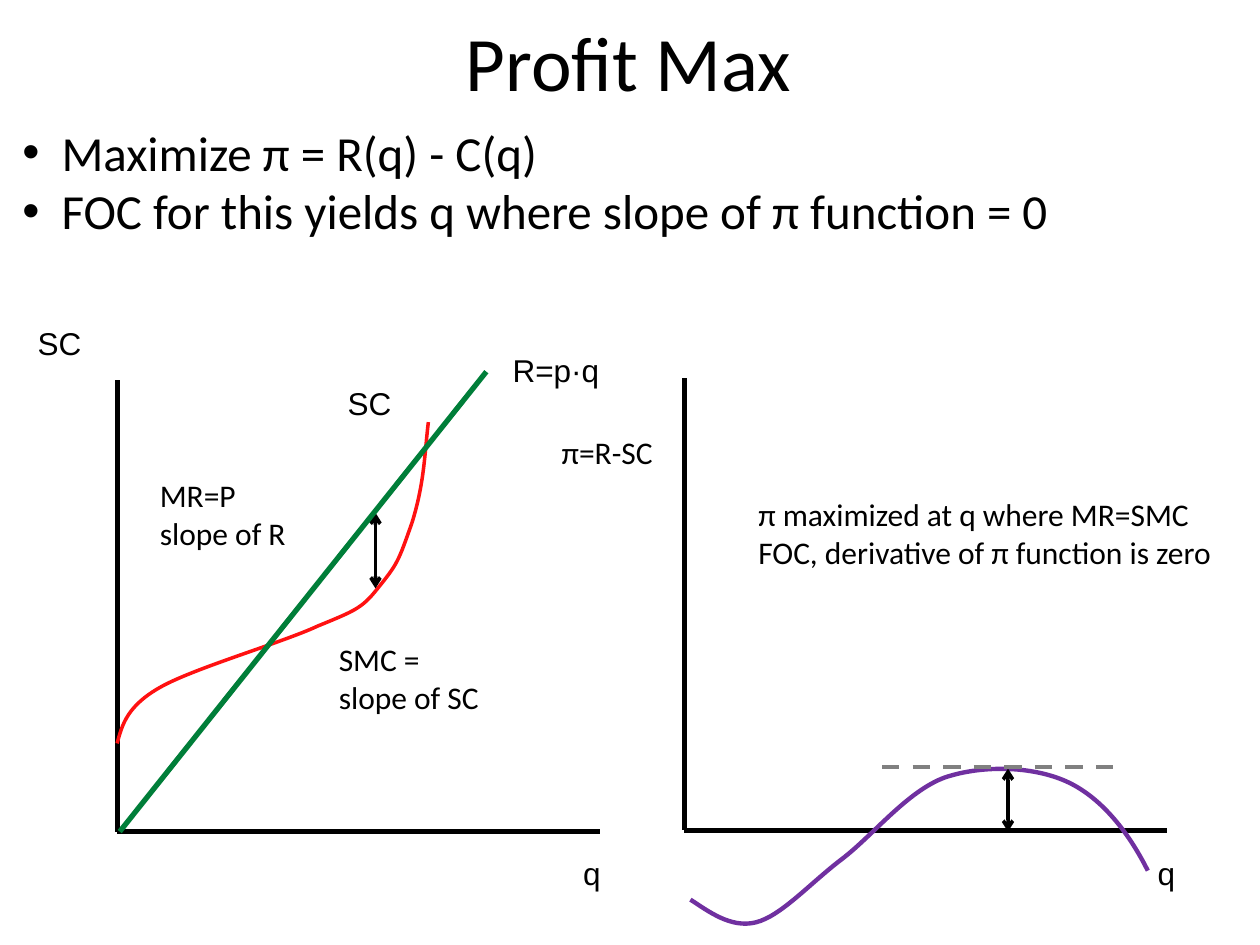
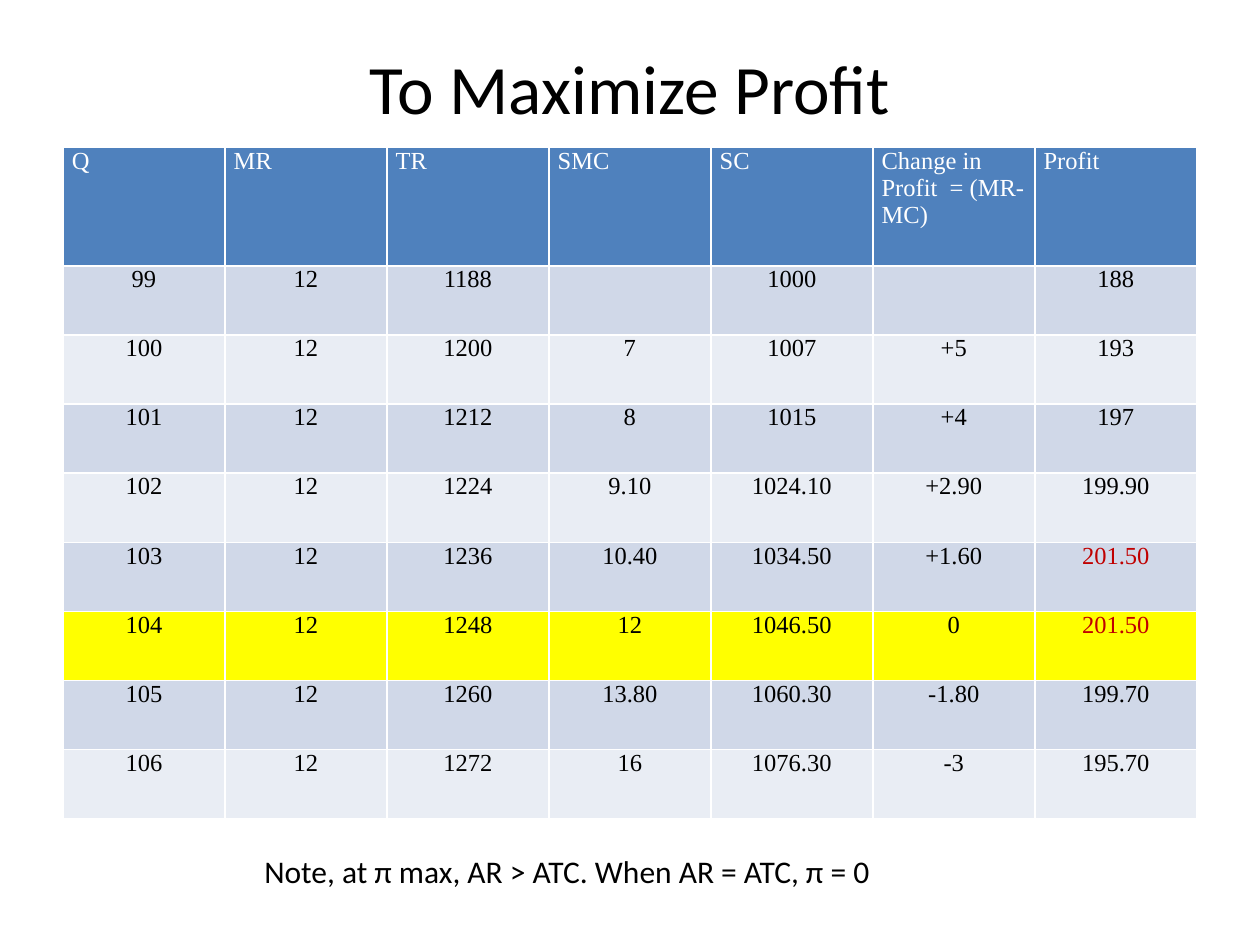
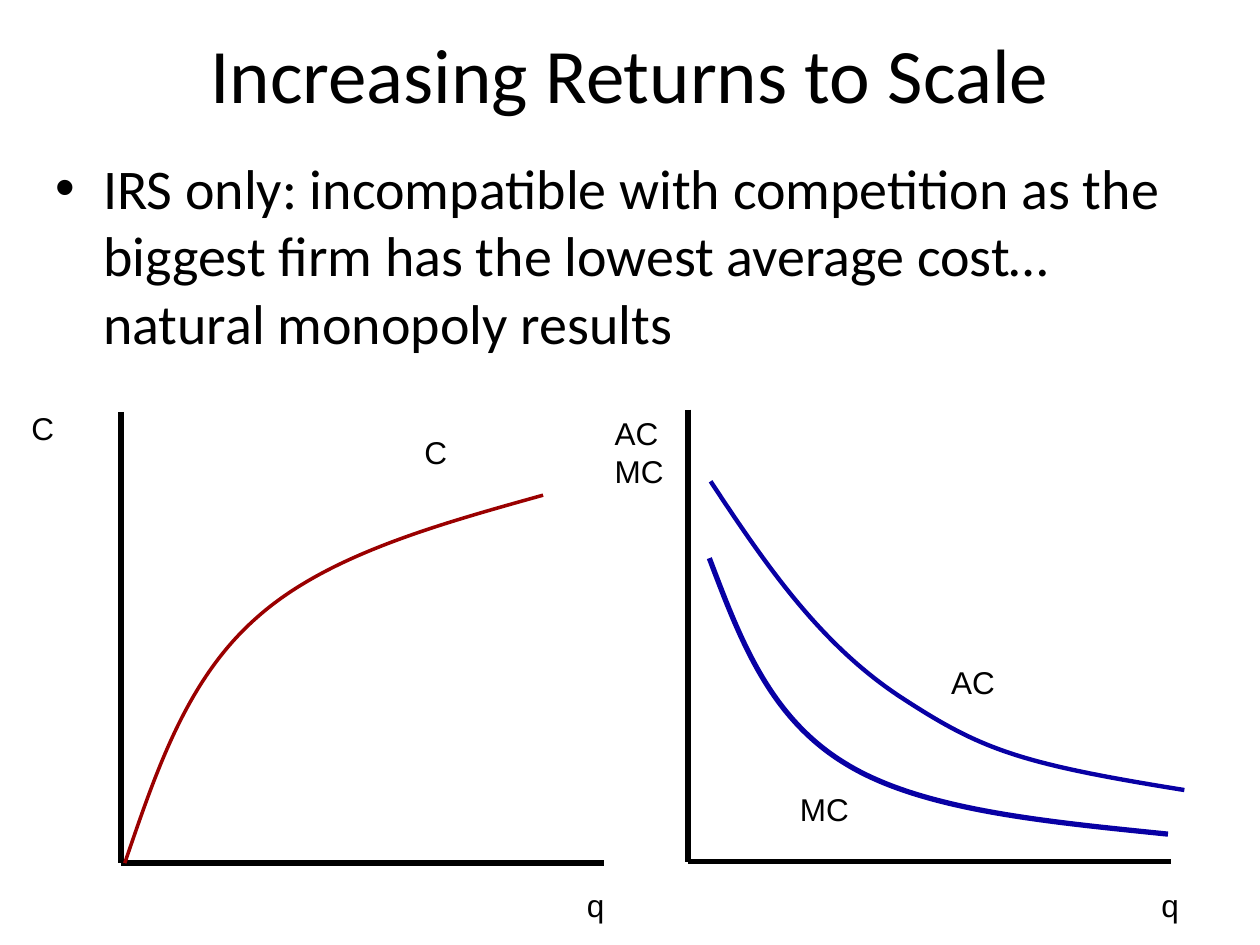
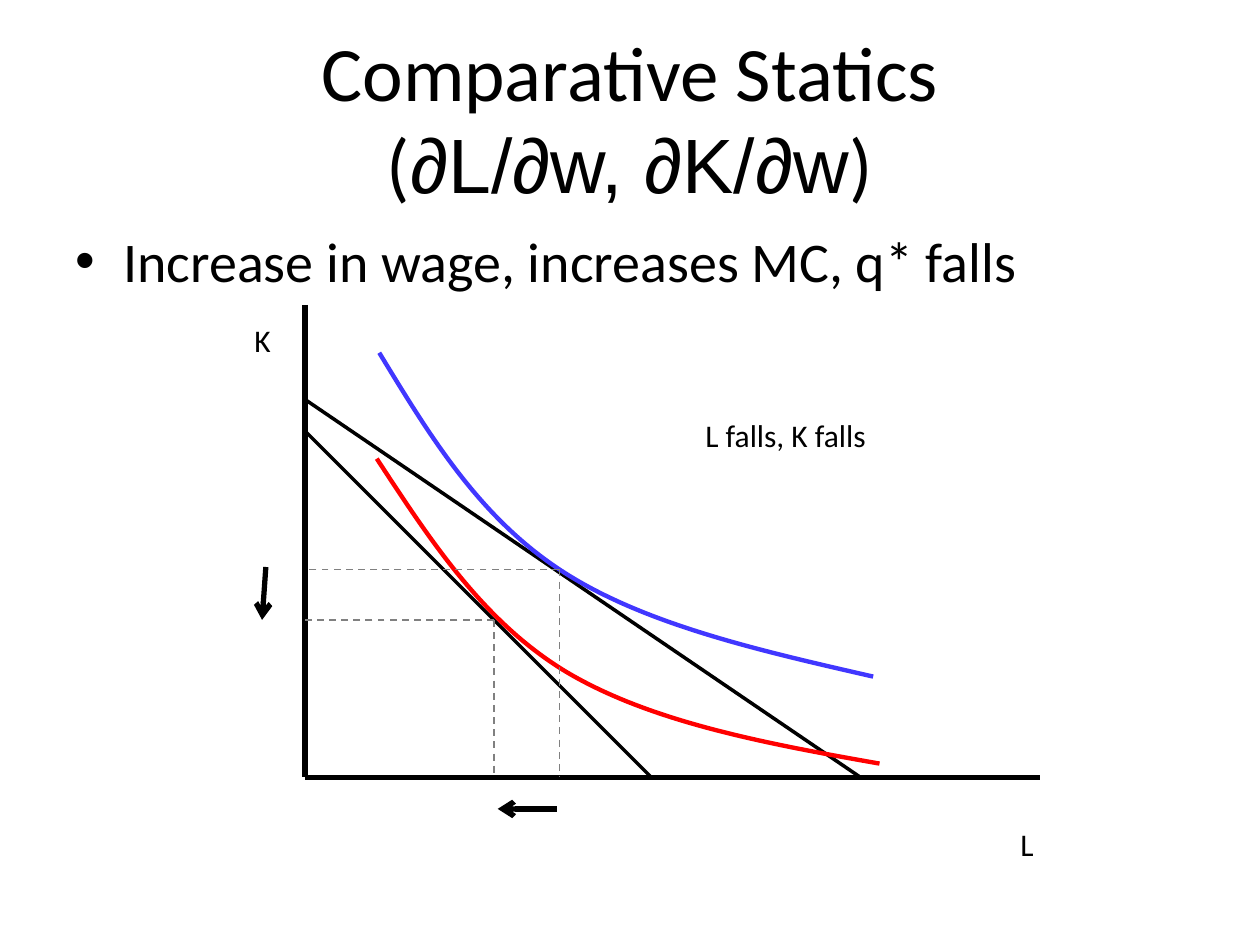
import dataclasses

import pptx
import pptx.dml.color
import pptx.enum.dml
import pptx.enum.shapes
import pptx.enum.text
import pptx.oxml
import pptx.oxml.ns
import pptx.oxml.xmlchemy
import pptx.util

Inches = pptx.util.Inches
Pt = pptx.util.Pt


@dataclasses.dataclass(frozen=True)
class Theme:
    # Colours
    ink: str = "000000"
    white: str = "FFFFFF"
    guide: str = "808080"
    cost: str = "FF1111"
    revenue: str = "007E39"
    profit: str = "7030A0"
    total_cost: str = "9A0000"
    unit_cost: str = "0800A4"
    isoquant_before: str = "4137FF"
    isoquant_after: str = "FF0000"
    header: str = "4F81BD"
    bands: tuple = ("D0D8E8", "E9EDF4")
    highlight: str = "FFFF00"
    best_profit: str = "C00000"
    # Fonts and type sizes
    sans: str = "Calibri"
    plain: str = "Arial"
    serif: str = "Times New Roman"
    title: float = 44
    small_title: float = 39.6
    body: float = 32
    small_body: float = 28
    label: float = 18
    cell: float = 14
    # Line widths
    axis: float = 3
    thick: float = 2.5
    thin: float = 2
    hair: float = 1


THEME = Theme()


def rgb(value):
    return pptx.dml.color.RGBColor.from_string(value)


def apply(target, formats):
    for name, value in formats.items():
        setattr(target, name, value)


def add_xml(parent, tag, **attributes):
    child = pptx.oxml.xmlchemy.OxmlElement(tag)
    for name, value in attributes.items():
        child.set(name, str(value))
    parent.append(child)
    return child


class Deck:
    def __init__(self, theme):
        self.theme = theme
        self.file = pptx.Presentation()
        apply(self.file, {"slide_width": Inches(10), "slide_height": Inches(7.5)})
        self.slide = None

    def new_slide(self):
        self.slide = self.file.slides.add_slide(self.file.slide_layouts[6])

    # Text
    def style_font(self, font, size, family, color):
        apply(font, {"size": Pt(size), "name": family, "bold": False})
        font.color.rgb = rgb(color)

    def text(self, box, paragraphs, size, family, frame_format, align=None):
        """Each paragraph is a string or a list of (text, font) pieces."""
        frame = self.slide.shapes.add_textbox(*map(Inches, box)).text_frame
        apply(frame, frame_format)
        for index, pieces in enumerate(paragraphs):
            paragraph = frame.add_paragraph() if index else frame.paragraphs[0]
            paragraph.alignment = align
            if isinstance(pieces, str):
                pieces = [(pieces, family)]
            for words, piece_family in pieces:
                if words == "\n":
                    paragraph.add_line_break()
                    continue
                run = paragraph.add_run()
                run.text = words
                self.style_font(run.font, size, piece_family, self.theme.ink)
        return frame

    def title(self, box, pieces, size=THEME.title):
        self.text(box, [pieces], size, self.theme.sans,
                  {"word_wrap": True,
                   "vertical_anchor": pptx.enum.text.MSO_ANCHOR.MIDDLE},
                  pptx.enum.text.PP_ALIGN.CENTER)

    def bullets(self, box, items, size=THEME.body, indent=0.38):
        frame = self.text(box, items, size, self.theme.sans, {"word_wrap": True})
        for paragraph in frame.paragraphs:
            properties = paragraph._p.get_or_add_pPr()
            properties.set("marL", str(Inches(indent)))
            properties.set("indent", str(-Inches(indent)))
            add_xml(properties, "a:buFont", typeface=self.theme.plain)
            add_xml(properties, "a:buChar", char="•")

    def label(self, box, *lines, family=THEME.plain):
        self.text(box, lines, self.theme.label, family,
                  {"word_wrap": False,
                   "auto_size": pptx.enum.text.MSO_AUTO_SIZE.SHAPE_TO_FIT_TEXT})

    def note(self, box, *lines):
        self.label(box, *lines, family=self.theme.sans)

    # Lines and curves
    def line(self, start, end, color=THEME.ink, width=THEME.axis,
             dashed=False, arrows=()):
        connector = self.slide.shapes.add_connector(
            pptx.enum.shapes.MSO_CONNECTOR.STRAIGHT, *map(Inches, start + end))
        connector.line.color.rgb = rgb(color)
        connector.line.width = Pt(width)
        if dashed:
            connector.line.dash_style = pptx.enum.dml.MSO_LINE.DASH
        for end_name in arrows:
            add_xml(connector.get_or_add_ln(), f"a:{end_name}End", type="arrow")
        add_xml(connector._element.spPr, "a:effectLst")

    def guide(self, start, end):
        self.line(start, end, self.theme.guide, self.theme.hair, dashed=True)

    def axes(self, left, top, right, base):
        self.line((left, top), (left, base))
        self.line((left, base), (right, base))

    def axis_pair(self, dx=0, dy=0):
        """Two graphs side by side, with q on each horizontal axis."""
        for left, top, base, q_left in ((0.93, 3.02, 6.6, 4.53),
                                        (5.43, 3, 6.59, 9.09)):
            self.axes(left + dx, top + dy, left + 3.83 + dx, base + dy)
            self.label((q_left + dx, 6.73 + dy, 0.34, 0.4), "q")

    def curve(self, start, segments, color, width):
        """Each segment is (control, control, end point)."""
        builder = self.slide.shapes.build_freeform(*map(Inches, start))
        ends = [tuple(map(Inches, segment[-1])) for segment in segments]
        builder.add_line_segments(ends, close=False)
        shape = builder.convert_to_shape()
        # Bend each straight step into a cubic one
        qn = pptx.oxml.ns.qn
        steps = list(shape._element.iter(qn("a:lnTo")))
        for step, segment in zip(steps, segments):
            step.tag = qn("a:cubicBezTo")
            end_point = step[0]
            for x, y in segment[:2]:
                add_xml(step, "a:pt", x=Inches(x) - shape.left,
                        y=Inches(y) - shape.top)
            step.append(end_point)
        shape.fill.background()
        shape.shadow.inherit = False
        shape.line.color.rgb = rgb(color)
        shape.line.width = Pt(width)

    # Table
    def table(self, box, rows, header_height, highlight_row, best_profit):
        theme = self.theme
        table = self.slide.shapes.add_table(
            len(rows), len(rows[0]), *map(Inches, box)).table
        table.horz_banding = False
        row_height = (box[3] - header_height) / (len(rows) - 1)
        margins = {"margin_left": Inches(0.07), "margin_right": Inches(0.07),
                   "margin_top": 0, "margin_bottom": 0}
        for r, values in enumerate(rows):
            table.rows[r].height = Inches(row_height if r else header_height)
            if r == 0:
                fill = theme.header
            elif r == highlight_row:
                fill = theme.highlight
            else:
                fill = theme.bands[(r - 1) % 2]
            for c, value in enumerate(values):
                cell = table.cell(r, c)
                apply(cell, margins)
                cell.fill.solid()
                cell.fill.fore_color.rgb = rgb(fill)
                paragraph = cell.text_frame.paragraphs[0]
                if r:
                    paragraph.alignment = pptx.enum.text.PP_ALIGN.CENTER
                if not value:
                    continue
                run = paragraph.add_run()
                run.text = value
                color = theme.ink if r else theme.white
                if value == best_profit:
                    color = theme.best_profit
                self.style_font(run.font, theme.cell, theme.serif, color)


def profit_max(deck):
    theme = deck.theme
    deck.new_slide()
    deck.title((0.49, 0.05, 9, 0.87), "Profit Max")
    deck.bullets((0.08, 0.92, 9.81, 1.04),
                 ["Maximize π = R(q) - C(q)",
                  "FOC for this yields q where slope of π function = 0"],
                 theme.small_body, 0.31)
    deck.axis_pair()

    # Revenue and cost
    deck.curve((0.93, 5.9),
               [((0.97, 5.75), (1.01, 5.6), (1.28, 5.45)),
                ((1.55, 5.3), (2.24, 5.1), (2.52, 4.97)),
                ((2.81, 4.85), (2.87, 4.83), (2.99, 4.68)),
                ((3.16, 4.47), (3.16, 4.46), (3.27, 4.15)),
                ((3.37, 3.83), (3.37, 3.6), (3.4, 3.35))],
               theme.cost, theme.thin)
    deck.label((0.2, 2.52, 0.55, 0.4), "SC")
    deck.label((3.97, 2.74, 0.9, 0.4), "R=p·q")
    deck.label((2.66, 3, 0.55, 0.4), "SC")
    deck.note((1.17, 3.73, 1.24, 0.71), "MR=P", "slope of R")
    deck.note((2.59, 5.03, 1.38, 0.71), "SMC =", "slope of SC")

    # Profit
    deck.note((4.36, 3.39, 1.03, 0.4), "π=R-SC")
    deck.curve((5.48, 7.14),
               [((5.62, 7.23), (5.8, 7.37), (6, 7.32)),
                ((6.2, 7.27), (6.43, 7.01), (6.68, 6.82)),
                ((6.93, 6.63), (7.2, 6.28), (7.5, 6.17)),
                ((7.8, 6.07), (8.19, 6.08), (8.46, 6.2)),
                ((8.73, 6.32), (8.95, 6.59), (9.11, 6.91))],
               theme.profit, theme.thick)
    for x, top, bottom in ((2.98, 4.07, 4.67), (8, 6.1, 6.6)):
        deck.line((x, top), (x, bottom), width=theme.thin, arrows=("head", "tail"))
    deck.note((5.92, 3.88, 3.93, 0.71), "π maximized at q where MR=SMC",
              "FOC, derivative of π function is zero")
    deck.line((0.95, 6.6), (3.86, 2.95), theme.revenue)
    deck.line((7, 6.09), (8.92, 6.09), theme.guide, theme.thick, dashed=True)


def to_maximize_profit(deck):
    deck.new_slide()
    deck.title((0.5, 0.3, 9, 0.78), "To Maximize Profit", deck.theme.small_title)
    rows = [
        ("Q", "MR", "TR", "SMC", "SC", "Change in Profit  = (MR-MC)", "Profit"),
        ("99", "12", "1188", "", "1000", "", "188"),
        ("100", "12", "1200", "7", "1007", "+5", "193"),
        ("101", "12", "1212", "8", "1015", "+4", "197"),
        ("102", "12", "1224", "9.10", "1024.10", "+2.90", "199.90"),
        ("103", "12", "1236", "10.40", "1034.50", "+1.60", "201.50"),
        ("104", "12", "1248", "12", "1046.50", "0", "201.50"),
        ("105", "12", "1260", "13.80", "1060.30", "-1.80", "199.70"),
        ("106", "12", "1272", "16", "1076.30", "-3", "195.70"),
    ]
    deck.table((0.5, 1.17, 9, 5.33), rows, header_height=0.94,
               highlight_row=6, best_profit="201.50")
    deck.note((2, 6.71, 5.07, 0.4),
              "Note, at π max, AR > ATC. When AR = ATC, π = 0")


def increasing_returns(deck):
    theme = deck.theme
    deck.new_slide()
    deck.title((0.5, 0.08, 9, 1), "Increasing Returns to Scale")
    deck.bullets((0.34, 1.17, 9.36, 6.22),
                 ["IRS only: incompatible with competition as the biggest firm "
                  "has the lowest average cost… natural monopoly results"])
    deck.axis_pair(0.03, 0.25)

    # Average and marginal cost
    deck.curve((5.64, 3.82),
               [((6.1, 4.52), (6.53, 5.13), (7.16, 5.54)),
                ((7.79, 5.95), (8.09, 6.06), (9.4, 6.27))],
               theme.unit_cost, theme.thick)
    deck.curve((5.63, 4.43),
               [((5.87, 5.06), (6.1, 5.69), (6.71, 6.06)),
                ((7.31, 6.43), (8.29, 6.52), (9.27, 6.62))],
               theme.unit_cost, theme.axis)
    deck.label((4.78, 3.24, 0.59, 0.71), "AC", "MC")
    deck.label((7.45, 5.21, 0.55, 0.4), "AC")
    deck.label((6.25, 6.22, 0.59, 0.4), "MC")

    # Total cost
    deck.curve((0.99, 6.85),
               [((1.24, 6.12), (1.48, 5.39), (2.04, 4.9)),
                ((2.59, 4.41), (3.45, 4.17), (4.31, 3.93))],
               theme.total_cost, theme.thin)
    for left, top in ((0.15, 3.2), (3.27, 3.39)):
        deck.label((left, top, 0.38, 0.4), "C")


def comparative_statics(deck):
    theme = deck.theme
    deck.new_slide()
    deck.title((0.5, 0.3, 9, 1.25),
               [("Comparative Statics", theme.sans), ("\n", theme.sans),
                ("(", theme.sans), ("∂L/∂w, ∂K/∂w", theme.plain),
                (")", theme.sans)])
    deck.bullets((0.5, 1.75, 8.92, 0.58),
                 ["Increase in wage, increases MC, q* falls"])

    # Axes, isocosts and isoquants
    left, base = 2.42, 6.17
    deck.axes(left, 2.42, 8.25, base)
    for top, right in ((3.17, 6.83), (3.42, 5.17)):
        deck.line((left, top), (right, base), width=theme.thin)
    deck.curve((3.01, 2.8),
               [((3.4, 3.44), (3.79, 4.09), (4.44, 4.52)),
                ((5.09, 4.95), (6.01, 5.16), (6.93, 5.37))],
               theme.isoquant_before, theme.thick)
    deck.curve((2.99, 3.64),
               [((3.41, 4.28), (3.83, 4.93), (4.49, 5.33)),
                ((5.16, 5.73), (6.07, 5.9), (6.98, 6.06))],
               theme.isoquant_after, theme.thick)

    # Input choices before and after the wage increase
    for choice in ((4.44, 4.52), (3.92, 4.92)):
        deck.guide(choice, (choice[0], base))
        deck.guide(choice, (left, choice[1]))
    deck.line((2.11, 4.5), (2.08, 4.92), arrows=("tail",))
    deck.line((4.42, 6.42), (3.95, 6.42), arrows=("tail",))
    deck.note((8, 6.5, 0.36, 0.4), "L")
    deck.note((1.92, 2.5, 0.38, 0.4), "K")
    deck.note((5.5, 3.25, 1.65, 0.4), "L falls, K falls")


def main():
    deck = Deck(THEME)
    profit_max(deck)
    to_maximize_profit(deck)
    increasing_returns(deck)
    comparative_statics(deck)
    deck.file.save("out.pptx")


if __name__ == "__main__":
    main()
